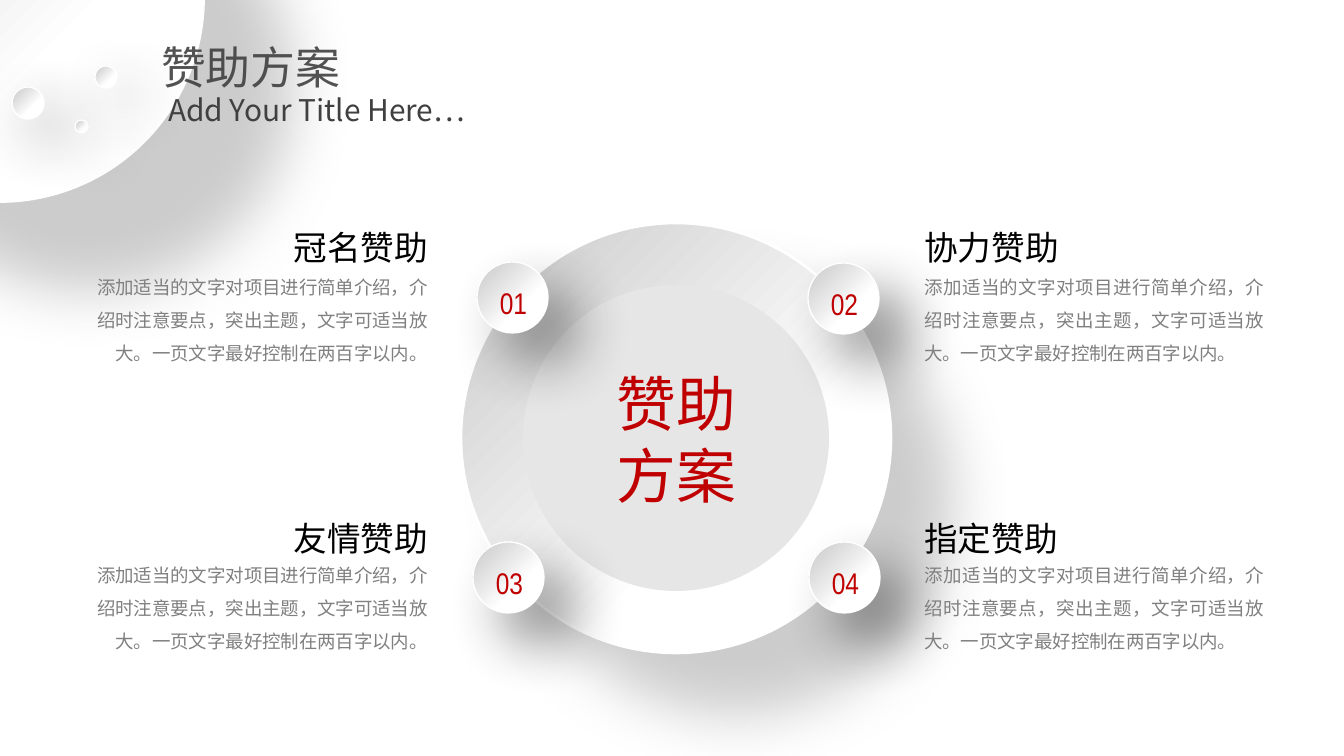
from lxml import etree
from pptx import Presentation
from pptx import util as u
from pptx.dml.color import RGBColor
from pptx.enum import shapes, text
from pptx.oxml import parse_xml
from pptx.oxml.ns import nsdecls, qn

PX = 914400 / 134.4
WHITE = RGBColor(0xFF, 0xFF, 0xFF)
SILVER = RGBColor(0xC7, 0xC7, 0xC7)
PALE = RGBColor(0xE7, 0xE6, 0xE6)
GRAY = RGBColor(0x80, 0x80, 0x80)
DARK = RGBColor(0x40, 0x40, 0x40)
BLACK = RGBColor(0, 0, 0)
RED = RGBColor(0xC0, 0, 0)
SANS = "Noto Sans CJK SC"
NARROW = "Arial Narrow"
LEFT, RIGHT = text.PP_ALIGN.LEFT, text.PP_ALIGN.RIGHT
MID, JUST = text.PP_ALIGN.CENTER, text.PP_ALIGN.JUSTIFY
BODY = ("添加适当的文字对项目进行简单介绍，介绍时注意要点，突出主题，"
        "文字可适当放大。一页文字最好控制在两百字以内。")


def px(n):
    return u.Emu(round(n * PX))


class Deck:
    def __init__(self, wide, high):
        self.prs = Presentation()
        self.prs.slide_width, self.prs.slide_height = px(wide), px(high)
        self.slide = self.prs.slides.add_slide(self.prs.slide_layouts[6])

    def disc(self, x, y, size, fill):
        disc = self.slide.shapes.add_shape(
            shapes.MSO_SHAPE.OVAL, px(x), px(y), px(size), px(size))
        disc.shadow.inherit = False
        disc.fill.solid()
        disc.fill.fore_color.rgb = fill
        disc.line.fill.background()
        return disc

    def ball(self, x, y, size, edge, tint, alpha, dist):
        """A glossy disc with a soft shadow to the lower right."""
        ball = self.disc(x, y, size, WHITE)
        ball.line.color.rgb = WHITE
        ball.line.width = u.Pt(edge)
        props = ball._element.spPr
        stops = "".join(
            f'<a:gs pos="{pos * 1000}"><a:srgbClr val="{hue}"/></a:gs>'
            for pos, hue in ((0, WHITE), (36, WHITE), (100, SILVER)))
        grad = parse_xml(
            f'<a:gradFill {nsdecls("a")} rotWithShape="1"><a:gsLst>{stops}</a:gsLst>'
            '<a:lin ang="13500000" scaled="0"/></a:gradFill>')
        props.replace(props.find(qn("a:solidFill")), grad)
        glow = parse_xml(
            f'<a:outerShdw {nsdecls("a")} blurRad="{u.Pt(33)}" dist="{u.Pt(dist)}" '
            'dir="2700000" algn="tl" rotWithShape="0">'
            f'<a:srgbClr val="{tint}"><a:alpha val="{alpha * 1000}"/></a:srgbClr>'
            '</a:outerShdw>')
        props.find(qn("a:effectLst")).append(glow)
        return ball

    def words(self, x, y, w, h, copy, size, hue, align=LEFT, face=SANS,
              space=None, alpha=None):
        box = self.slide.shapes.add_textbox(px(x), px(y), px(w), px(h))
        frame = box.text_frame
        frame.word_wrap = True
        frame.auto_size = text.MSO_AUTO_SIZE.SHAPE_TO_FIT_TEXT
        frame.text = copy
        for para in frame.paragraphs:
            para.alignment = align
            if space:
                para.line_spacing = space
            for run in para.runs:
                font = run.font
                font.name, font.size, font.color.rgb = face, u.Pt(size), hue
                props = run._r.get_or_add_rPr()
                latin = props.find(qn("a:latin"))
                asian = etree.Element(qn("a:ea"), typeface=face)
                latin.addnext(asian)
                if alpha:
                    tone = props.find(qn("a:solidFill"))[0]
                    etree.SubElement(tone, qn("a:alpha"), val=str(alpha * 1000))

    def group(self, *parts):
        self.slide.shapes.add_group_shape(parts)


def main():
    deck = Deck(1344, 756)

    # Corner moon with three small balls
    deck.ball(-204, -206, 407, 2, GRAY, 40, 66)
    for x, y, size in ((12, 87, 32), (75, 120, 13), (95, 66, 22)):
        deck.ball(x, y, size, 0.75, BLACK, 45, 15)

    # Heading
    deck.words(148, 20, 450, 75, "赞助方案", 24, DARK, space=1.25, alpha=90)
    deck.words(155, 78, 437, 54, "Add Your Title Here…", 16, DARK, space=1.2)

    # Ring
    deck.group(deck.ball(461, 223, 430, 1.5, GRAY, 40, 45),
               deck.disc(523, 285, 306, PALE))

    # Numbered balls on the ring
    spots = (("01", 477, 262), ("02", 808, 263), ("03", 473, 542), ("04", 809, 542))
    for num, x, y in spots:
        deck.ball(x, y, 71, 0.75, BLACK, 45, 22)
    for num, x, y in spots:
        deck.words(x, y + 16, 73, 50, num, 16, RED, MID, NARROW)

    # Four sponsor plans: left column ends at 441, right column starts at 911
    for top, body, left, right in ((220, 258, ("冠名赞助", 286), ("协力赞助", 290)),
                                   (511, 546, ("友情赞助", 257), ("指定赞助", 265))):
        name, wide = left
        deck.words(75, body, 366, 114, BODY, 9.9, GRAY, RIGHT, space=1.5)
        deck.words(441 - wide, top, wide, 54, name, 18, BLACK, RIGHT)
        name, wide = right
        deck.words(911, body, 367, 114, BODY, 9.9, GRAY, JUST, space=1.5)
        deck.words(911, top, wide, 54, name, 18, BLACK)

    # Centre label
    deck.words(560, 360, 233, 159, "赞助\n方案", 32, RED, MID)

    deck.prs.save("out.pptx")


if __name__ == "__main__":
    main()
